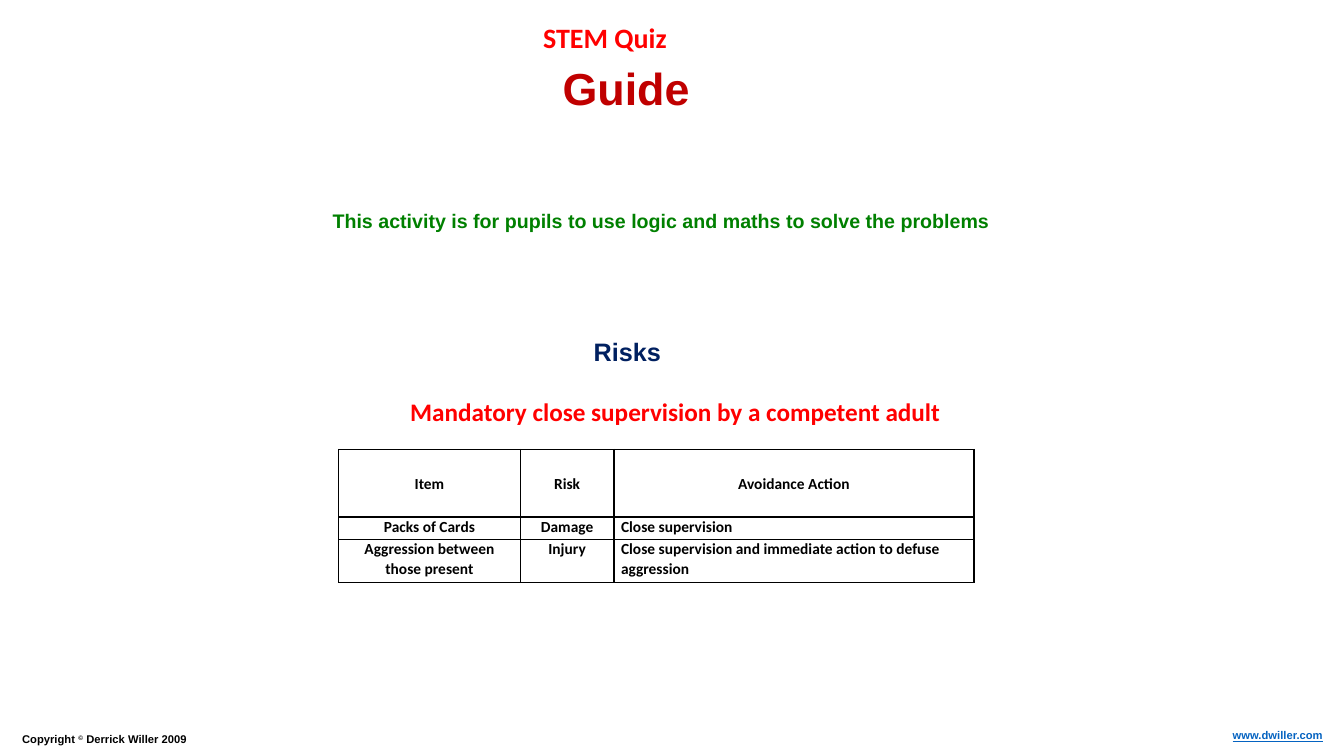
from pptx import Presentation
from pptx.dml.color import RGBColor
from pptx.enum.text import MSO_ANCHOR, MSO_AUTO_SIZE, PP_ALIGN
from pptx.oxml.ns import qn
from pptx.util import Pt
from lxml.etree import SubElement

EMU_PER_PX = 9144


def px(length):
    return length * EMU_PER_PX


def color(value):
    return RGBColor.from_string(value)


def add_run(para, text, size, font, fill):
    span = para.add_run()
    span.text = text
    span.font.size = Pt(size)
    span.font.name = font
    span.font.bold = True
    span.font.color.rgb = color(fill)
    return span


def format_box(box, place, align=PP_ALIGN.LEFT, wrap=False):
    box.left, box.top, box.width, box.height = map(px, place)
    frame = box.text_frame
    frame.auto_size = MSO_AUTO_SIZE.NONE
    frame.word_wrap = wrap
    frame.vertical_anchor = MSO_ANCHOR.TOP
    para = frame.paragraphs[0]
    para.alignment = align
    para.line_spacing = 1.0
    para.space_before = Pt(0)
    return para


def add_text(page, place, align=PP_ALIGN.LEFT, wrap=False):
    box = page.shapes.add_textbox(0, 0, 0, 0)
    return format_box(box, place, align, wrap)


def add_footer(page):
    style = (8, "Arial", "000000")
    para = add_text(page, (12, 722, 565, 24), wrap=True)
    add_run(para, "Copyright ", *style)
    mark = add_run(para, "©", *style)
    mark.font._element.set("baseline", "30000")
    add_run(para, " Derrick Willer 2009", *style)
    para = add_text(page, (1188, 718, 134, 24), PP_ALIGN.RIGHT, True)
    address = add_run(para, "www.dwiller.com", 8, "Arial", "0563C1")
    address.font.underline = True


def add_borders(cell):
    properties = cell._tc.get_or_add_tcPr()
    for side in ("a:lnL", "a:lnR", "a:lnT", "a:lnB"):
        line = SubElement(properties, qn(side), w=str(Pt(1)))
        fill = SubElement(line, qn("a:solidFill"))
        SubElement(fill, qn("a:srgbClr"), val="000000")


def fill_cell(cell, text, align, anchor):
    add_borders(cell)
    cell.fill.background()
    cell.margin_left = cell.margin_right = px(7)
    cell.margin_top = px(1)
    cell.margin_bottom = 0
    cell.vertical_anchor = anchor
    para = cell.text_frame.paragraphs[0]
    para.alignment = align
    add_run(para, text, 11, "Calibri", "000000")


def add_risk_table(page):
    rows = [
        ("Item", "Risk", "Avoidance Action"),
        ("Packs of Cards", "Damage", "Close supervision"),
        ("Aggression between those present", "Injury",
         "Close supervision and immediate action to defuse aggression"),
    ]
    widths = (180, 93, 357)
    heights = (67, 22, 43)
    table = page.shapes.add_table(
        len(rows), len(widths), px(336), px(446), px(sum(widths)), px(sum(heights))
    ).table
    table.first_row = table.horz_banding = False
    for column, width in zip(table.columns, widths):
        column.width = px(width)
    for row, height in zip(table.rows, heights):
        row.height = px(height)
    for row_index, texts in enumerate(rows):
        header = row_index == 0
        anchor = MSO_ANCHOR.MIDDLE if header else MSO_ANCHOR.TOP
        for column_index, text in enumerate(texts):
            centred = header or column_index < 2
            align = PP_ALIGN.CENTER if centred else PP_ALIGN.LEFT
            fill_cell(table.cell(row_index, column_index), text, align, anchor)


def main():
    deck = Presentation()
    deck.slide_width, deck.slide_height = px(1333), px(750)
    page = deck.slides.add_slide(deck.slide_layouts[5])

    add_footer(page)
    para = add_text(page, (460, 15, 280, 44), PP_ALIGN.CENTER)
    add_run(para, "STEM Quiz", 20, "Calibri", "FF0000")
    para = format_box(page.shapes.title, (548, 55, 147, 64))
    add_run(para, "Guide", 32, "Arial", "C00000")
    para = add_text(page, (320, 202, 891, 34), wrap=True)
    add_run(para, "This activity is for pupils to use logic and maths to solve the problems",
            14, "Arial", "008000")
    para = add_text(page, (579, 329, 88, 40))
    add_run(para, "Risks", 18, "Arial", "002060")
    add_risk_table(page)
    para = add_text(page, (397, 388, 550, 40))
    add_run(para, "Mandatory close supervision by a competent adult", 18, "Calibri", "FF0000")

    deck.save("out.pptx")


if __name__ == "__main__":
    main()
